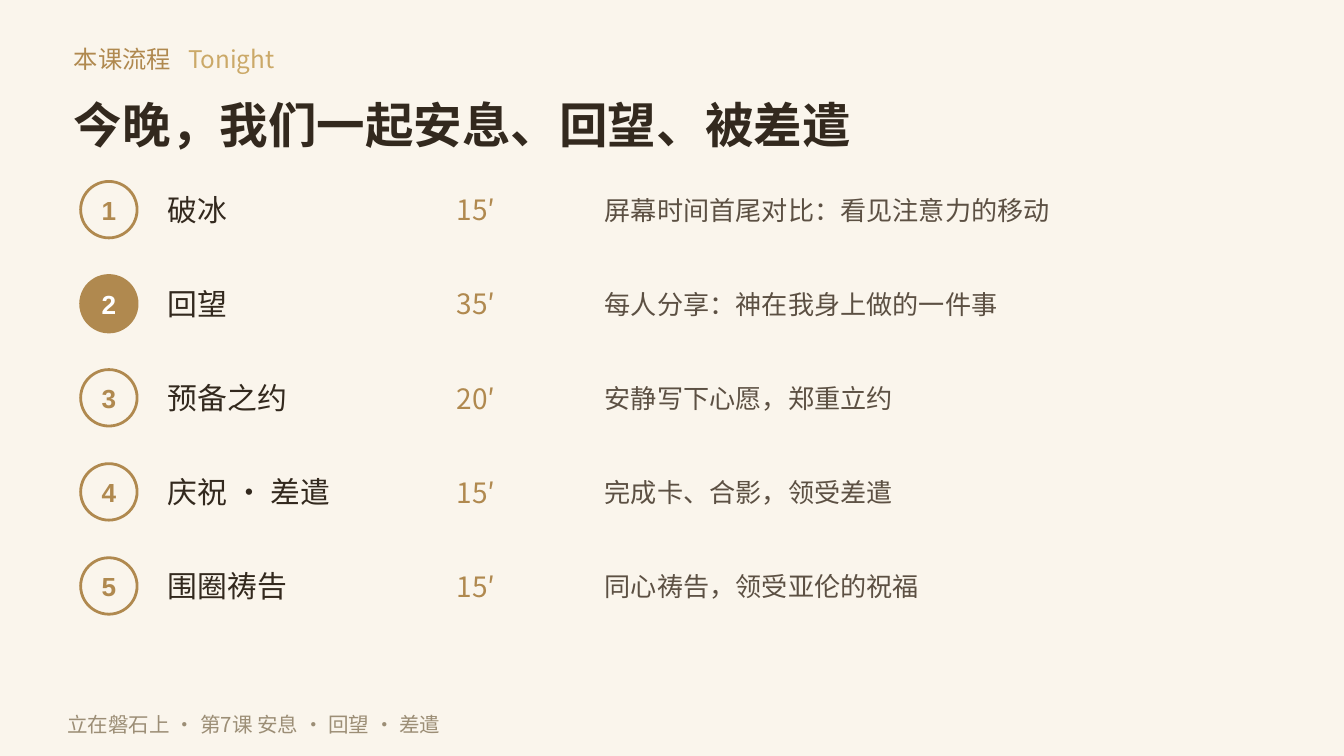
"""Build the lesson agenda slide."""
from lxml import etree
from pptx import Presentation
from pptx.dml.color import RGBColor
from pptx.enum.shapes import MSO_SHAPE
from pptx.enum.text import MSO_ANCHOR, MSO_AUTO_SIZE, PP_ALIGN
from pptx.oxml.ns import qn
from pptx.util import Inches, Pt

OVAL = MSO_SHAPE.OVAL
MIDDLE = MSO_ANCHOR.MIDDLE
NO_AUTOFIT = MSO_AUTO_SIZE.NONE
LEFT, CENTER = PP_ALIGN.LEFT, PP_ALIGN.CENTER

CREAM = RGBColor(0xFA, 0xF5, 0xEC)
GOLD = RGBColor(0xB0, 0x89, 0x4F)
LIGHT_GOLD = RGBColor(0xCB, 0xA9, 0x68)
DARK_BROWN = RGBColor(0x33, 0x29, 0x1E)
BROWN = RGBColor(0x5C, 0x50, 0x43)
TAUPE = RGBColor(0x9C, 0x8E, 0x76)
WHITE = RGBColor(0xFF, 0xFF, 0xFF)

CHINESE_FONT = "Noto Sans CJK SC"
NUMBER_FONT = "Arial"

SLIDE_WIDTH = 10
SLIDE_HEIGHT = SLIDE_WIDTH * 9 / 16
FIRST_ROW_TOP = 1.35
ROW_STEP = 0.7
ROW_HEIGHT = 0.42
HIGHLIGHTED_STEP = 2

AGENDA = [
    ("破冰", "15′", "屏幕时间首尾对比：看见注意力的移动"),
    ("回望", "35′", "每人分享：神在我身上做的一件事"),
    ("预备之约", "20′", "安静写下心愿，郑重立约"),
    ("庆祝 · 差遣", "15′", "完成卡、合影，领受差遣"),
    ("围圈祷告", "15′", "同心祷告，领受亚伦的祝福"),
]
COLUMNS = [
    (1.25, 2, 16, DARK_BROWN),
    (3.4, 0.9, 15, GOLD),
    (4.5, 4.8, 14, BROWN),
]


def add_run(paragraph, text, size, color, bold=False, font_name=CHINESE_FONT):
    """Add a formatted run, with its font set for Latin and Chinese letters."""
    run = paragraph.add_run()
    run.text = text
    font = run.font
    font.name, font.size, font.bold = font_name, Pt(size), bold
    font.color.rgb = color
    east_asian = etree.SubElement(font._element, qn("a:ea"))
    east_asian.set("typeface", font_name)


def prepare_frame(shape, alignment=LEFT):
    """Clear the margins of a shape's text and return its first paragraph."""
    frame = shape.text_frame
    frame.margin_left = frame.margin_right = 0
    frame.margin_top = frame.margin_bottom = 0
    frame.word_wrap = True
    frame.auto_size = NO_AUTOFIT
    frame.vertical_anchor = MIDDLE
    paragraph = frame.paragraphs[0]
    paragraph.alignment = alignment
    return paragraph


def add_text_box(slide, left, top, width, height):
    """Add an empty text box and return its paragraph."""
    box = slide.shapes.add_textbox(
        Inches(left), Inches(top), Inches(width), Inches(height))
    return prepare_frame(box)


def add_tab_stop(paragraph, position):
    """Add a left tab stop to a paragraph."""
    properties = paragraph._p.get_or_add_pPr()
    tab_list = etree.SubElement(properties, qn("a:tabLst"))
    etree.SubElement(tab_list, qn("a:tab"),
                     pos=str(Inches(position)), algn="l")


def set_title(slide, text):
    """Place and fill the title placeholder."""
    title = slide.shapes.title
    title.left, title.top = Inches(0.55), Inches(0.7)
    title.width, title.height = Inches(9), Inches(0.45)
    add_run(prepare_frame(title), text, 26, DARK_BROWN, bold=True)


def add_number_badge(slide, number, top):
    """Add a numbered circle, filled for the highlighted step."""
    highlighted = number == HIGHLIGHTED_STEP
    badge = slide.shapes.add_shape(
        OVAL, Inches(0.6), Inches(top), Inches(ROW_HEIGHT), Inches(ROW_HEIGHT))
    badge.shadow.inherit = False
    badge.fill.solid()
    badge.fill.fore_color.rgb = GOLD if highlighted else CREAM
    badge.line.color.rgb = GOLD
    badge.line.width = Pt(1.5)
    add_run(prepare_frame(badge, CENTER), str(number), 14,
            WHITE if highlighted else GOLD, bold=True, font_name=NUMBER_FONT)


def add_agenda_row(slide, number, texts):
    """Add one agenda step with its badge and columns."""
    top = FIRST_ROW_TOP + (number - 1) * ROW_STEP
    add_number_badge(slide, number, top)
    for text, (left, width, size, color) in zip(texts, COLUMNS):
        paragraph = add_text_box(slide, left, top, width, ROW_HEIGHT)
        add_run(paragraph, text, size, color)


def main():
    """Build and save the presentation."""
    presentation = Presentation()
    presentation.slide_width = Inches(SLIDE_WIDTH)
    presentation.slide_height = Inches(SLIDE_HEIGHT)
    slide = presentation.slides.add_slide(presentation.slide_layouts[5])
    background = slide.background.fill
    background.solid()
    background.fore_color.rgb = CREAM

    heading = add_text_box(slide, 0.55, 0.28, 8.5, 0.32)
    add_tab_stop(heading, 0.85)
    add_run(heading, "本课流程\t", 13, GOLD)
    add_run(heading, "Tonight", 13, LIGHT_GOLD)
    set_title(slide, "今晚，我们一起安息、回望、被差遣")

    for number, texts in enumerate(AGENDA, start=1):
        add_agenda_row(slide, number, texts)

    footer = add_text_box(slide, 0.5, 5.25, 7.5, 0.28)
    add_run(footer, "立在磐石上 · 第7课 安息 · 回望 · 差遣", 11, TAUPE)
    presentation.save("out.pptx")


if __name__ == "__main__":
    main()
